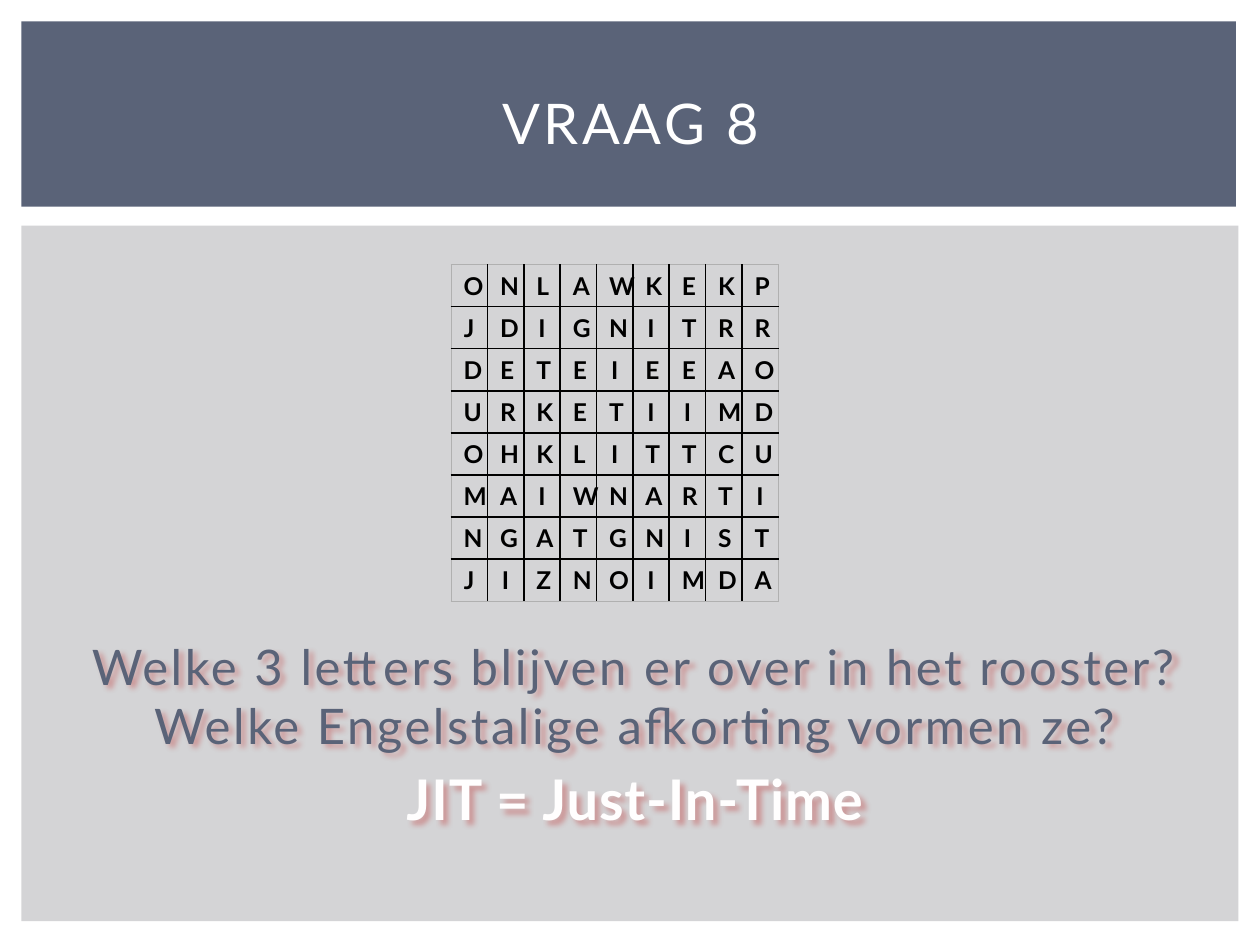
"""Build the quiz slide with a word-search grid, its question and its answer."""
import lxml.etree
import pptx
import pptx.dml.color
import pptx.enum.shapes
import pptx.enum.text
import pptx.oxml
import pptx.oxml.ns
import pptx.util

Inches = pptx.util.Inches
THEME = {
    "font": "Lato", "slate": "5A6378", "panel": "D4D4D6", "white": "FFFFFF",
    "answer": "FFFEFE", "red": "BF3635", "black": "000000", "edge": "B0B0B0",
    "title_size": 32, "question_size": 28, "answer_size": 32, "letter_size": 14,
}
NAMESPACE = pptx.oxml.ns.nsdecls("a")
LETTERS = [
    "ONLAWKEKP", "JDIGNITRR", "DETEIEEAO", "URKETIIMD",
    "OHKLITTCU", "MAIWNARTI", "NGATGNIST", "JIZNOIMDA",
]


def write(paragraph, text, size, color, bold=False, spacing=0, outline=None):
    paragraph.alignment = pptx.enum.text.PP_ALIGN.CENTER
    run = paragraph.add_run()
    run.text = text
    run.font.name = THEME["font"]
    run.font.size = pptx.util.Pt(size)
    run.font.bold = bold
    run.font.color.rgb = pptx.dml.color.RGBColor.from_string(color)
    properties = run.font._element
    if spacing:
        properties.set("spc", str(int(spacing * 100)))
    if outline:
        properties.insert(0, line_element("ln", outline, 1))


def line_element(tag, color, width):
    return pptx.oxml.parse_xml(
        f'<a:{tag} {NAMESPACE} w="{int(width * 12700)}"><a:solidFill>'
        f'<a:srgbClr val="{color}"/></a:solidFill></a:{tag}>')


presentation = pptx.Presentation()
presentation.slide_width = Inches(10)
presentation.slide_height = Inches(7.5)
slide = presentation.slides.add_slide(presentation.slide_layouts[5])

for top, width, height, color in [
    (1.79, 9.66, 5.52, THEME["panel"]),
    (0.17, 9.64, 1.47, THEME["slate"]),
]:
    band = slide.shapes.add_shape(
        pptx.enum.shapes.MSO_SHAPE.RECTANGLE,
        Inches(0.17), Inches(top), Inches(width), Inches(height))
    band.shadow.inherit = False
    band.fill.solid()
    band.fill.fore_color.rgb = pptx.dml.color.RGBColor.from_string(color)
    band.line.fill.background()

title = slide.shapes.title
title.left, title.top = Inches(0.42), Inches(0.39)
title.width, title.height = Inches(9.17), Inches(1.15)
title.text_frame.vertical_anchor = pptx.enum.text.MSO_ANCHOR.MIDDLE
write(title.text_frame.paragraphs[0], "VRAAG 8",
      size=THEME["title_size"], color=THEME["white"], spacing=2)
slide.shapes._spTree.append(title._element)

question = slide.shapes.add_textbox(Inches(0.42), Inches(5), Inches(9.19), Inches(1.65))
frame = question.text_frame
frame.word_wrap = True
frame.vertical_anchor = pptx.enum.text.MSO_ANCHOR.TOP
write(frame.paragraphs[0],
      "Welke 3 letters blijven er over in het rooster? "
      "Welke Engelstalige afkorting vormen ze?",
      size=THEME["question_size"], color=THEME["slate"], spacing=1.5)
answer = frame.add_paragraph()
answer.space_before = pptx.util.Pt(6)
write(answer, "JIT = Just-In-Time", size=THEME["answer_size"],
      color=THEME["answer"], bold=True, spacing=0.5, outline=THEME["red"])
for paragraph in frame.paragraphs:
    paragraph._p.get_or_add_pPr().set("marL", str(Inches(0.05)))
question._element.spPr.append(pptx.oxml.parse_xml(
    f'<a:effectLst {NAMESPACE}><a:outerShdw blurRad="38100" dist="38100" '
    f'dir="2700000" algn="tl" rotWithShape="0"><a:srgbClr val="{THEME["red"]}">'
    '<a:alpha val="40000"/></a:srgbClr></a:outerShdw></a:effectLst>'))

row_count, column_count = len(LETTERS), len(LETTERS[0])
grid = slide.shapes.add_table(
    row_count, column_count, Inches(3.58), Inches(2.1), Inches(2.6), Inches(2.67)).table
grid.first_row = False
grid.horz_banding = False
for row, word in enumerate(LETTERS):
    for column, letter in enumerate(word):
        cell = grid.cell(row, column)
        cell.vertical_anchor = pptx.enum.text.MSO_ANCHOR.MIDDLE
        write(cell.text_frame.paragraphs[0], letter,
              size=THEME["letter_size"], color=THEME["black"], bold=True)
        outer_sides = {
            "lnL": column == 0, "lnR": column == column_count - 1,
            "lnT": row == 0, "lnB": row == row_count - 1,
        }
        for side, outer in outer_sides.items():
            color, width = (THEME["edge"], 0.5) if outer else (THEME["black"], 1)
            cell._tc.get_or_add_tcPr().append(line_element(side, color, width))
        cell.fill.background()

presentation.save("out.pptx")
